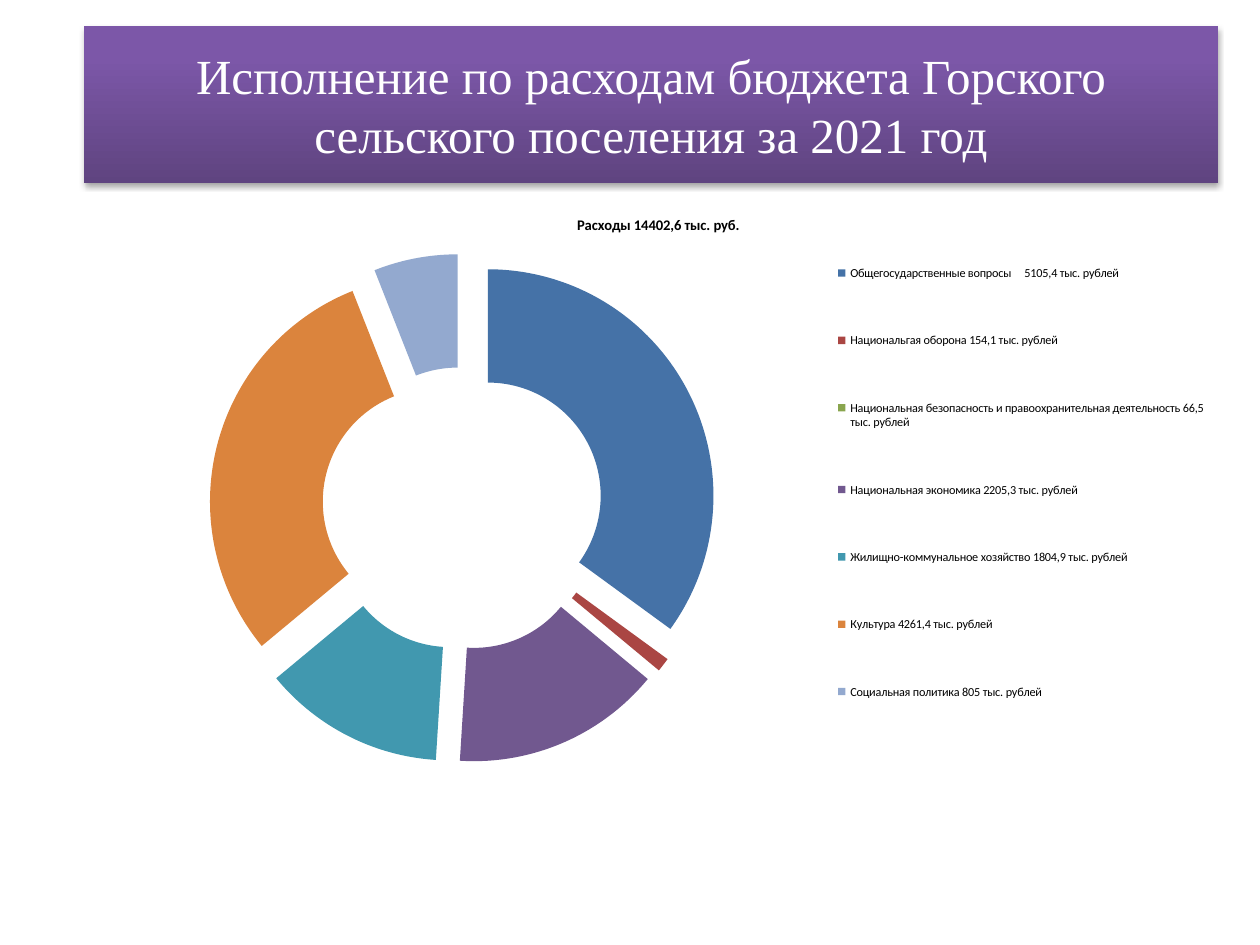
from lxml import etree
from pptx import Presentation
from pptx import util as u
from pptx.chart.data import CategoryChartData
from pptx.dml.color import RGBColor
from pptx.enum import chart as ch, shapes, text
from pptx.oxml import parse_xml
from pptx.oxml.ns import nsdecls, qn

Pt = u.Pt
COLORS = {
    "banner_bottom": "5F4480", "banner_top": "7C57A8",
    "banner_text": "FFFFFF", "label": "000000",
}
BUDGET_TITLE = "Расходы 14402,6 тыс. руб."
# label, share of all spending in whole percent, slice colour
EXPENSES = [
    ("Общегосударственные вопросы     5105,4 тыс. рублей", 35, "4572A7"),
    ("Национальгая оборона 154,1 тыс. рублей", 1, "AA4643"),
    ("Национальная безопасность и правоохранительная деятельность "
     "66,5 тыс. рублей", 0, "89A54E"),
    ("Национальная экономика 2205,3 тыс. рублей", 15, "71588F"),
    ("Жилищно-коммунальное хозяйство 1804,9 тыс. рублей", 13, "4198AF"),
    ("Культура 4261,4 тыс. рублей", 30, "DB843D"),
    ("Социальная политика 805 тыс. рублей", 6, "93A9CF"),
]


def style_font(font, color, **values):
    for name, value in values.items():
        setattr(font, name, value)
    font.color.rgb = RGBColor.from_string(COLORS[color])


def place(parent, index, **fractions):
    """Give a chart part a manual layout in fractions of the chart area."""
    for old in parent.findall(qn("c:layout")):
        parent.remove(old)
    layout = etree.Element(qn("c:layout"))
    manual = etree.SubElement(layout, qn("c:manualLayout"))
    for name, value in fractions.items():
        etree.SubElement(manual, qn(f"c:{name}")).set("val", str(value))
    parent.insert(index, layout)


prs = Presentation()
prs.slide_width, prs.slide_height = Pt(720), Pt(540)
slide = prs.slides.add_slide(prs.slide_layouts[6])

# Heading banner
banner = slide.shapes.add_shape(
    shapes.MSO_SHAPE.RECTANGLE, Pt(48), Pt(15), Pt(648), Pt(89.5))
banner.line.fill.background()
banner.fill.gradient()
banner.fill.gradient_angle = 90
stops = zip(banner.fill.gradient_stops, (0, 0.8), ("banner_bottom", "banner_top"))
for stop, position, color in stops:
    stop.position = position
    stop.color.rgb = RGBColor.from_string(COLORS[color])
banner.shadow.inherit = False
effects = banner.element.spPr.find(qn("a:effectLst"))
effects.append(parse_xml(
    f'<a:outerShdw {nsdecls("a")} blurRad="{Pt(3.1)}" dist="{Pt(1.8)}" '
    'dir="5400000" rotWithShape="0"><a:srgbClr val="000000">'
    '<a:alpha val="35000"/></a:srgbClr></a:outerShdw>'))
frame = banner.text_frame
frame.word_wrap = True
frame.vertical_anchor = text.MSO_ANCHOR.MIDDLE
heading = frame.paragraphs[0]
heading.alignment = text.PP_ALIGN.CENTER
run = heading.add_run()
run.text = "Исполнение по расходам бюджета Горского сельского поселения за 2021 год"
style_font(run.font, "banner_text", name="Times New Roman", size=Pt(28))

# Expenses doughnut
data = CategoryChartData()
data.categories = [label for label, _, _ in EXPENSES]
data.add_series(BUDGET_TITLE, [share for _, share, _ in EXPENSES])
chart = slide.shapes.add_chart(
    ch.XL_CHART_TYPE.DOUGHNUT, Pt(54), Pt(111.6), Pt(640.8), Pt(334.8), data).chart
style_font(chart.font, "label", name="Calibri", size=Pt(7))

chart.has_title = True
chart_title = chart.chart_title
chart_title.text_frame.text = BUDGET_TITLE
style_font(chart_title.text_frame.paragraphs[0].runs[0].font, "label",
           name="Calibri", size=Pt(8.4), bold=True)
place(chart_title._element, 1, xMode="edge", yMode="edge", x=0.43, y=0.03)

chart.has_legend = True
legend = chart.legend
legend.position = ch.XL_LEGEND_POSITION.RIGHT
legend.include_in_layout = False
style_font(legend.font, "label", name="Calibri", size=Pt(7))
place(legend._element, 1, xMode="edge", yMode="edge", x=0.66, y=0.03, w=0.34, h=0.92)

plot = chart.plots[0]
plot.vary_by_categories = True
place(chart._chartSpace.chart.plotArea, 0, layoutTarget="inner",
      xMode="edge", yMode="edge", x=0.1, y=0.1, w=0.46, h=0.87)
hole = plot._element.find(qn("c:holeSize"))
hole.set("val", "50")

ring = plot.series[0]
for index, (_, _, color) in enumerate(EXPENSES):
    part = ring.points[index].format
    part.fill.solid()
    part.fill.fore_color.rgb = RGBColor.from_string(color)
    part.line.fill.background()
explosion = etree.Element(qn("c:explosion"))
explosion.set("val", "25")
ring._element.find(qn("c:dPt")).addprevious(explosion)

prs.save("out.pptx")
